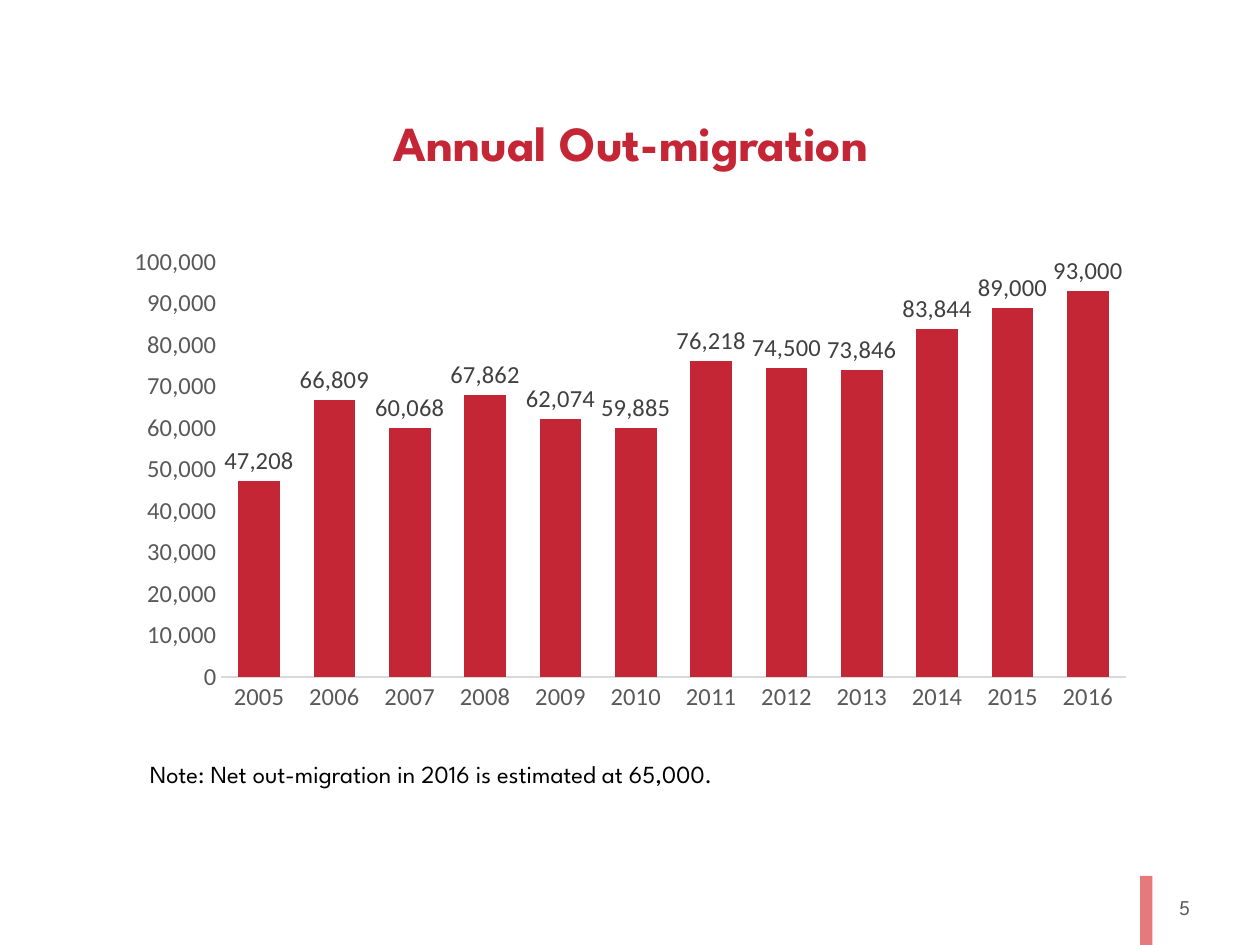
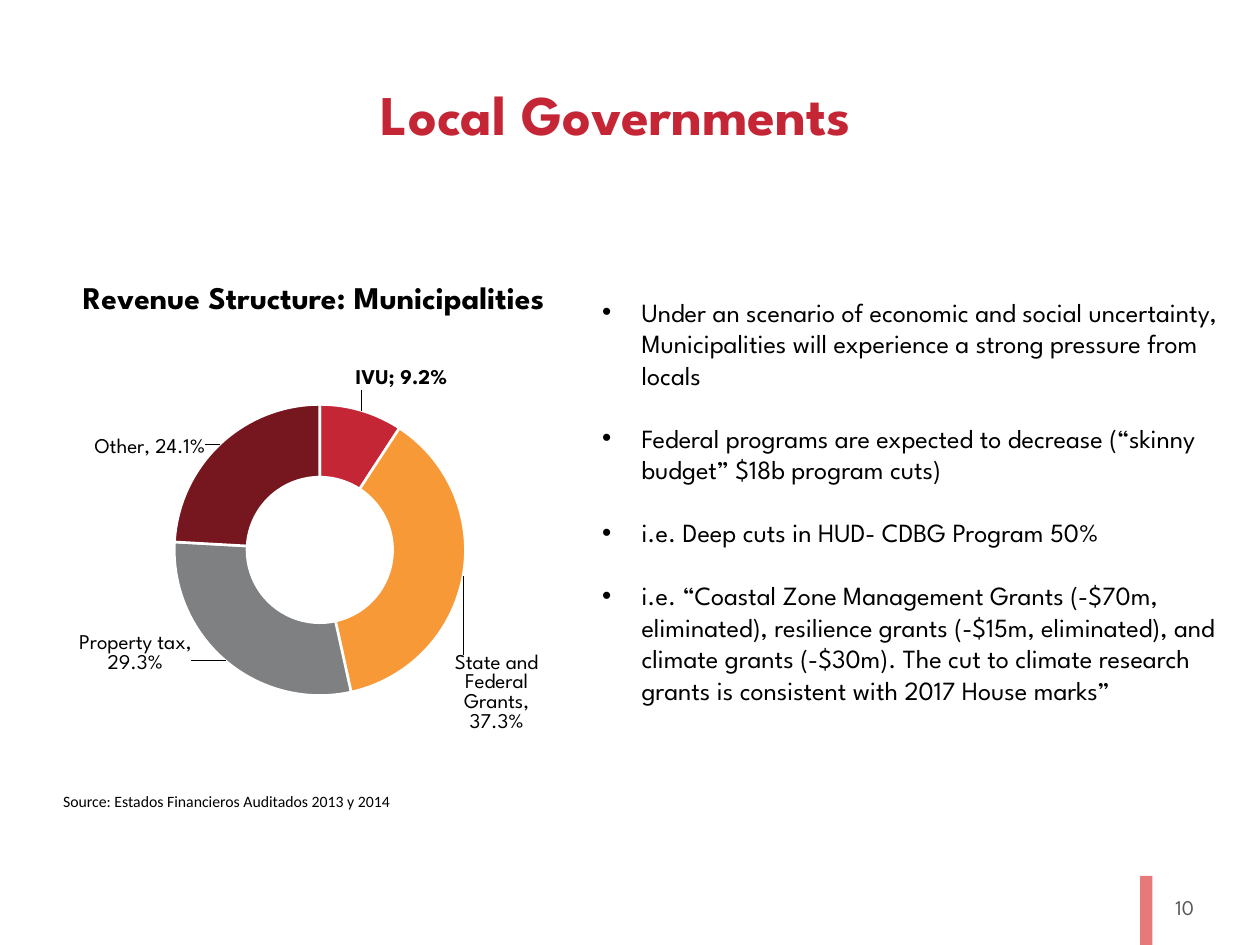
from lxml import etree
from pptx import Presentation
from pptx.chart import data as cd
from pptx.dml.color import RGBColor
from pptx.enum import chart as ch, shapes, text
from pptx.oxml import parse_xml
from pptx.oxml.ns import nsdecls, qn
from pptx.util import Pt

COLORS = {
    "red": "C52636", "pink": "E67A7A", "orange": "F89938", "gray": "7E8082",
    "maroon": "761720", "axis": "595959", "line": "D9D9D9", "label": "404040",
    "black": "000000", "white": "FFFFFF",
}
SPARTAN, CALIBRI = "League Spartan", "Calibri"
CENTER = text.PP_ALIGN.CENTER


def style(font, size, color="black", name=SPARTAN, bold=False):
    font.size, font.name, font.bold = Pt(size), name, bold
    font.color.rgb = RGBColor.from_string(COLORS[color])


def add_text(s, box, content, size, color="black", name=SPARTAN, bold=False, align=None):
    tf = s.shapes.add_textbox(*map(Pt, box)).text_frame
    tf.word_wrap = True
    tf.text = content
    p = tf.paragraphs[0]
    p.alignment = align
    style(p.font, size, color, name, bold)
    return tf


prs = Presentation()
prs.slide_width, prs.slide_height = Pt(720), Pt(540)

slides = []
for title, left, top, size, number in [
    ("Annual Out-migration", 37.5, 31, 28, "5"),
    ("Local Governments", 29, 15, 32, "10"),
]:
    s = prs.slides.add_slide(prs.slide_layouts[5])
    sp = s.shapes.title
    sp.left, sp.top, sp.width, sp.height = Pt(left), Pt(top), Pt(646), Pt(104.5)
    tf = sp.text_frame
    tf.text = title
    tf.vertical_anchor = text.MSO_ANCHOR.MIDDLE
    p = tf.paragraphs[0]
    p.alignment, p.line_spacing = CENTER, 0.9
    style(p.font, size, "red", bold=True)

    add_text(s, (656.5, 507.5, 41, 21.5), number, 12, "axis", align=CENTER)
    band = s.shapes.add_shape(shapes.MSO_SHAPE.RECTANGLE, Pt(651.5), Pt(500.5), Pt(7), Pt(39.5))
    band.shadow.inherit = False
    band.fill.solid()
    band.fill.fore_color.rgb = RGBColor.from_string(COLORS["pink"])
    band.line.fill.background()
    slides.append(s)

migration, local = slides

data = cd.CategoryChartData(number_format="#,##0")
data.categories = [str(year) for year in range(2005, 2017)]
data.add_series("Series 1", [47208, 66809, 60068, 67862, 62074, 59885,
                             76218, 74500, 73846, 83844, 89000, 93000])
chart = migration.shapes.add_chart(
    ch.XL_CHART_TYPE.COLUMN_CLUSTERED, Pt(65), Pt(135.5), Pt(590), Pt(277), data).chart
chart.has_legend = chart.has_title = False
style(chart.font, 14, name=CALIBRI)
for axis in (chart.category_axis, chart.value_axis):
    axis.major_tick_mark = axis.minor_tick_mark = ch.XL_TICK_MARK.NONE
    axis.has_major_gridlines = False
    style(axis.tick_labels.font, 14, "axis", CALIBRI)
line = chart.category_axis.format.line
line.color.rgb = RGBColor.from_string(COLORS["line"])
line.width = Pt(0.75)
axis = chart.value_axis
axis.format.line.fill.background()
axis.minimum_scale, axis.maximum_scale, axis.major_unit = 0, 100000, 10000
axis.tick_labels.number_format = "#,##0"
axis.tick_labels.number_format_is_linked = False
plot = chart.plots[0]
plot.gap_width, plot.overlap, plot.vary_by_categories = 80, -27, False
fill = plot.series[0].format.fill
fill.solid()
fill.fore_color.rgb = RGBColor.from_string(COLORS["red"])
plot.has_data_labels = True
labels = plot.data_labels
labels.show_value = True
labels.number_format, labels.number_format_is_linked = "#,##0", False
labels.position = ch.XL_LABEL_POSITION.OUTSIDE_END
style(labels.font, 14, "label", CALIBRI)

add_text(migration, (78.5, 430, 544, 24.5),
         "Note: Net out-migration in 2016 is estimated at 65,000.", 14)

add_text(local, (12.5, 155.5, 333.5, 33), "Revenue Structure: Municipalities", 18,
         bold=True, align=CENTER)

revenues = [
    ("IVU", 0.092, "red", 0.08, -0.12, 0.2, 0.06),
    ("State and Federal Grants", 0.373, "orange", 0.11, 0.23, 0.18, 0.2),
    ("Property tax", 0.293, "gray", -0.18, 0.04, 0.24, 0.1),
    ("Other", 0.241, "maroon", -0.15, -0.04, 0.24, 0.06),
]
data = cd.CategoryChartData(number_format="0.0%")
data.categories = [revenue[0] for revenue in revenues]
data.add_series("Series 1", [revenue[1] for revenue in revenues])
chart = local.shapes.add_chart(
    ch.XL_CHART_TYPE.DOUGHNUT, Pt(-1.5), Pt(184.5), Pt(361), Pt(309.5), data).chart
chart.has_legend = chart.has_title = False
style(chart.font, 11, name=CALIBRI)
plot_area = chart.plots[0]._element.getparent()
for old in plot_area.findall(qn("c:layout")):
    plot_area.remove(old)
plot_area.insert(0, parse_xml(
    f'<c:layout {nsdecls("c")}><c:manualLayout><c:layoutTarget val="inner"/>'
    '<c:xMode val="edge"/><c:yMode val="edge"/><c:x val="0.28"/><c:y val="0.144"/>'
    '<c:w val="0.461"/><c:h val="0.551"/></c:manualLayout></c:layout>'))

series = chart.plots[0].series[0]
labels = series.data_labels
labels.show_value = labels.show_category_name = True
labels.number_format, labels.number_format_is_linked = "0.0%", False
style(labels.font, 12, bold=True)
for i, (name, share, color, x, y, w, h) in enumerate(revenues):
    point = series.points[i]
    point.format.fill.solid()
    point.format.fill.fore_color.rgb = RGBColor.from_string(COLORS[color])
    point.format.line.color.rgb = RGBColor.from_string(COLORS["white"])
    point.format.line.width = Pt(1.5)
    if i:
        r = point.data_label.text_frame.paragraphs[0].add_run()
        r.text = f"{name}, {share:.1%}"
        style(r.font, 12)
    else:
        style(point.data_label.font, 12, bold=True)
    d_lbl = labels._element.findall(qn("c:dLbl"))[i]
    d_lbl.find(qn("c:showCatName")).set("val", "1")
    d_lbl[0].addnext(parse_xml(
        f'<c:layout {nsdecls("c")}><c:manualLayout><c:x val="{x}"/><c:y val="{y}"/>'
        '</c:manualLayout></c:layout>'))
    etree.SubElement(d_lbl, qn("c:separator")).text = ", " if i else "; "
    d_lbl.append(parse_xml(
        f'<c:extLst {nsdecls("c")}><c:ext uri="{{CE6537A1-D6FC-4f65-9D91-7224C49458BB}}" '
        'xmlns:c15="http://schemas.microsoft.com/office/drawing/2012/chart"><c15:layout>'
        f'<c:manualLayout><c:w val="{w}"/><c:h val="{h}"/></c:manualLayout>'
        '</c15:layout></c:ext></c:extLst>'))

tf = add_text(local, (29, 451, 201.5, 14),
              "Source: Estados Financieros Auditados 2013 y 2014", 9, name=CALIBRI)
tf.margin_top = tf.margin_bottom = 0
tf.vertical_anchor = text.MSO_ANCHOR.MIDDLE

bullets = [
    "Under an scenario of economic and social uncertainty, Municipalities will experience "
    "a strong pressure from locals",
    "Federal programs are expected to decrease (“skinny budget” $18b program cuts)",
    "i.e. Deep cuts in HUD- CDBG Program 50%",
    "i.e. “Coastal Zone Management Grants (-$70m, eliminated), resilience grants (-$15m, "
    "eliminated), and climate grants (-$30m). The cut to climate research grants is "
    "consistent with 2017 House marks”",
]
tf = local.shapes.add_textbox(Pt(337), Pt(165.5), Pt(383), Pt(262)).text_frame
tf.word_wrap = True
tf.text = "\n".join(bullets)
for i, p in enumerate(tf.paragraphs):
    p_pr = p._p.get_or_add_pPr()
    p_pr.set("marL", str(Pt(22.5)))
    p_pr.set("indent", str(Pt(-22.5)))
    etree.SubElement(p_pr, qn("a:buFont")).set("typeface", "Arial")
    etree.SubElement(p_pr, qn("a:buChar")).set("char", "•")
    if i:
        p.space_before = Pt(18)
    style(p.font, 15)

prs.save("out.pptx")
